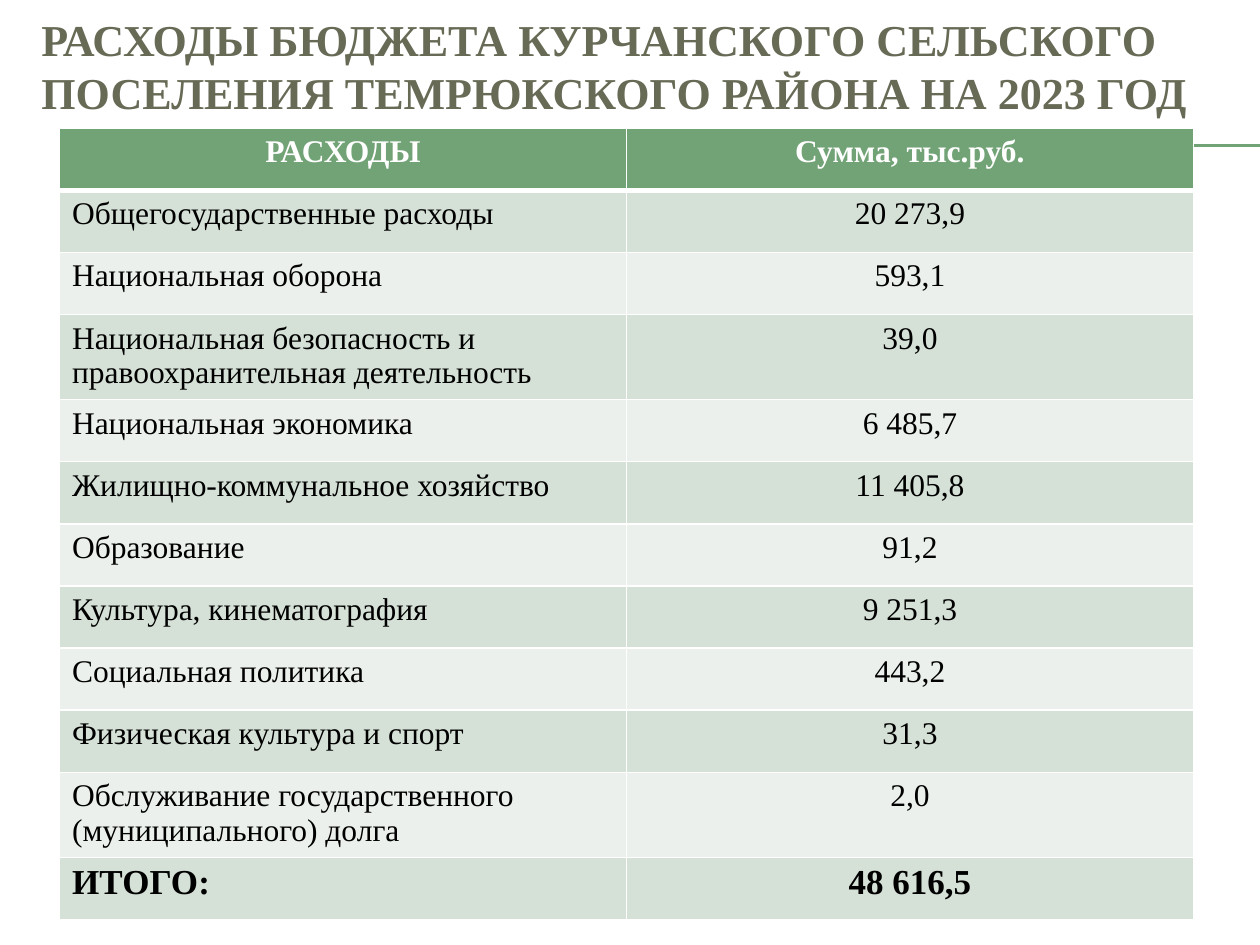
import dataclasses

import pptx
import pptx.dml.color
import pptx.enum.shapes
import pptx.enum.text
import pptx.oxml
import pptx.oxml.ns
import pptx.util

Pt = pptx.util.Pt
ALIGN = pptx.enum.text.PP_ALIGN


@dataclasses.dataclass(frozen=True)
class Theme:
    font: str = "Times New Roman"
    title: str = "676A55"
    accent: str = "72A376"
    bands: tuple = ("D5E0D6", "EBF0EC")
    text: str = "000000"
    light: str = "FFFFFF"
    title_size: float = 25.2
    body_size: float = 18
    total_size: float = 20


THEME = Theme()
TITLE = "РАСХОДЫ БЮДЖЕТА КУРЧАНСКОГО СЕЛЬСКОГО ПОСЕЛЕНИЯ ТЕМРЮКСКОГО РАЙОНА НА 2023 ГОД"
HEADER = ("РАСХОДЫ", "Сумма, тыс.руб.")
EXPENSES = [
    ("Общегосударственные расходы", "20 273,9"),
    ("Национальная оборона", "593,1"),
    ("Национальная безопасность и правоохранительная деятельность", "39,0"),
    ("Национальная экономика", "6 485,7"),
    ("Жилищно-коммунальное хозяйство", "11 405,8"),
    ("Образование", "91,2"),
    ("Культура, кинематография", "9 251,3"),
    ("Социальная политика", "443,2"),
    ("Физическая культура и спорт", "31,3"),
    ("Обслуживание государственного (муниципального) долга", "2,0"),
]
TOTAL = ("ИТОГО:", "48 616,5")
ROW_HEIGHT, TALL_ROW_HEIGHT, LONG_LABEL = 35.5, 48.6, 40


def rgb(color):
    return pptx.dml.color.RGBColor.from_string(color)


def write(tf, text, size=THEME.body_size, color=THEME.text, bold=False, align=ALIGN.LEFT):
    p = tf.paragraphs[0]
    p.alignment = align
    r = p.add_run()
    r.text = text
    r.font.name = THEME.font
    r.font.size = Pt(size)
    r.font.bold = bold
    r.font.color.rgb = rgb(color)


def set_borders(cell, bottom):
    tcPr = cell._tc.get_or_add_tcPr()
    widths = {"lnL": 1, "lnR": 1, "lnT": 1, "lnB": bottom}
    for i, (tag, width) in enumerate(widths.items()):
        tcPr.insert(i, pptx.oxml.parse_xml(
            f'<a:{tag} {pptx.oxml.ns.nsdecls("a")} w="{Pt(width)}"><a:solidFill>'
            f'<a:srgbClr val="{THEME.light}"/></a:solidFill></a:{tag}>'))


def add_rules(s, x, y, w, gap):
    for top in (y, y + gap):
        line = s.shapes.add_connector(
            pptx.enum.shapes.MSO_CONNECTOR.STRAIGHT, Pt(x), Pt(top), Pt(x + w), Pt(top))
        line.line.color.rgb = rgb(THEME.accent)
        line.line.width = Pt(0.75)
        line._element.spPr.append(pptx.oxml.parse_xml(
            f'<a:effectLst {pptx.oxml.ns.nsdecls("a")}/>'))


def place_title(s, x, y, w, h):
    sp = s.shapes.title
    sp.left, sp.top, sp.width, sp.height = Pt(x), Pt(y), Pt(w), Pt(h)
    tf = sp.text_frame
    tf.word_wrap = True
    tf.auto_size = pptx.enum.text.MSO_AUTO_SIZE.NONE
    tf.vertical_anchor = pptx.enum.text.MSO_ANCHOR.MIDDLE
    write(tf, TITLE, size=THEME.title_size, color=THEME.title, bold=True)


def add_expense_table(s, x, y, w):
    rows = [HEADER, *EXPENSES, TOTAL]
    heights = [TALL_ROW_HEIGHT if len(label) > LONG_LABEL else ROW_HEIGHT
               for label, _ in rows]
    table = s.shapes.add_table(
        len(rows), 2, Pt(x), Pt(y), Pt(w), Pt(sum(heights))).table
    for column in table.columns:
        column.width = Pt(w / 2)
    for i, (row, height) in enumerate(zip(rows, heights)):
        table.rows[i].height = Pt(height)
        header, total = row is HEADER, row is TOTAL
        for j, text in enumerate(row):
            cell = table.cell(i, j)
            cell.fill.solid()
            cell.fill.fore_color.rgb = rgb(THEME.accent if header else THEME.bands[(i - 1) % 2])
            set_borders(cell, bottom=3 if header else 1)
            write(cell.text_frame, text,
                  size=THEME.total_size if total else THEME.body_size,
                  color=THEME.light if header else THEME.text,
                  bold=header or total,
                  align=ALIGN.CENTER if header or j else ALIGN.LEFT)


def main():
    prs = pptx.Presentation()
    prs.slide_width, prs.slide_height = Pt(720), Pt(540)
    s = prs.slides.add_slide(prs.slide_layouts[5])
    add_rules(s, x=40, y=82.8, w=680, gap=0.7)
    place_title(s, x=16.5, y=11.5, w=692, h=52)
    add_expense_table(s, x=34, y=73.3, w=648)
    prs.save("out.pptx")


if __name__ == "__main__":
    main()
